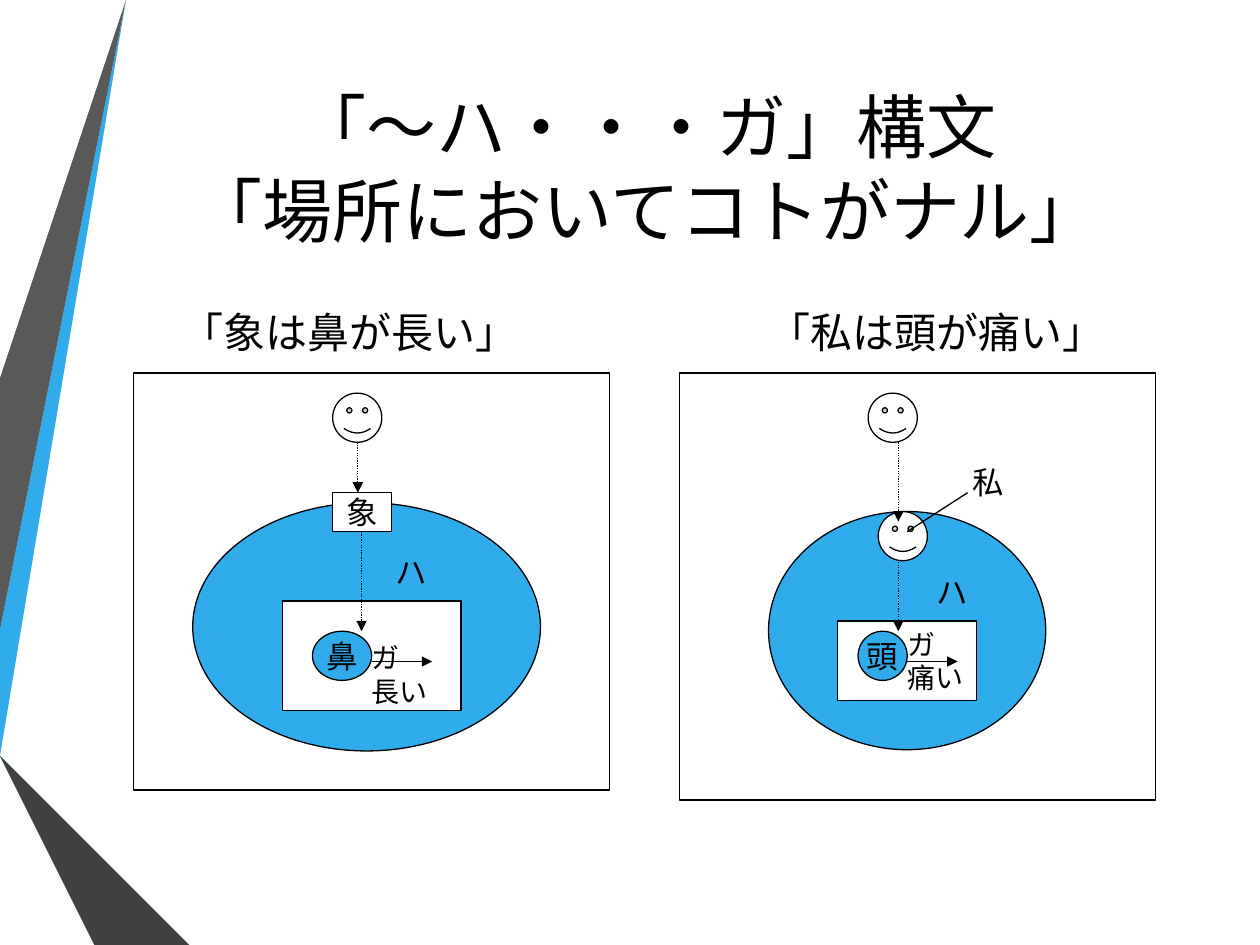
from lxml import etree
from pptx import Presentation
from pptx.dml.color import RGBColor
from pptx.enum.dml import MSO_LINE
from pptx.enum.shapes import MSO_CONNECTOR, MSO_SHAPE
from pptx.enum.text import MSO_ANCHOR, PP_ALIGN
from pptx.oxml.ns import qn
from pptx.util import Inches, Pt

BLACK = RGBColor(0x00, 0x00, 0x00)
WHITE = RGBColor(0xFF, 0xFF, 0xFF)
BLUE = RGBColor(0x30, 0xAC, 0xEC)
MID_BLUE = RGBColor(0x12, 0x87, 0xC3)
DARK_BLUE = RGBColor(0x0C, 0x5A, 0x82)
GRAY = RGBColor(0x59, 0x59, 0x59)
DARK_GRAY = RGBColor(0x40, 0x40, 0x40)
SHADOW_GRAY = RGBColor(0x26, 0x26, 0x26)

RECTANGLE = MSO_SHAPE.RECTANGLE
OVAL = MSO_SHAPE.OVAL
SMILEY = MSO_SHAPE.SMILEY_FACE
STRAIGHT = MSO_CONNECTOR.STRAIGHT
DOTTED = MSO_LINE.ROUND_DOT
MIDDLE = MSO_ANCHOR.MIDDLE
LEFT, CENTER = PP_ALIGN.LEFT, PP_ALIGN.CENTER

LINE_WIDTH = Pt(0.75)
FACE_SIZE = 0.39
LABEL_HEIGHT = 0.31

# Background ribbons: colour and corner points
RIBBONS = [
    (BLUE, [(0, 5.44), (0, 5.75), (0.22, 5.79), (1.17, 0), (0.89, 0)]),
    (GRAY, [(0.83, 0), (0.55, 0), (0, 3.36), (0, 5.06)]),
    (SHADOW_GRAY, [(0, 6.19), (0, 6.21), (0.93, 7.5), (0.99, 7.5)]),
    (DARK_BLUE, [(0, 5.79), (0, 5.8), (1.56, 7.5), (1.63, 7.5)]),
    (MID_BLUE, [(0, 5.79), (1.63, 7.5), (2.33, 7.5), (0.22, 5.79), (0, 5.75)]),
    (DARK_GRAY, [(0, 6.19), (0.99, 7.5), (1.51, 7.5), (0, 5.86)]),
]


def add_ribbon(slide, color, points):
    builder = slide.shapes.build_freeform(*points[0], scale=Inches(1))
    builder.add_line_segments(points[1:], close=True)
    ribbon = builder.convert_to_shape()
    ribbon.shadow.inherit = False
    ribbon.fill.solid()
    ribbon.fill.fore_color.rgb = color
    ribbon.line.fill.background()


def write(box, text, size, font="Arial", align=CENTER, left=0, top=0, wrap=False):
    frame = box.text_frame
    frame.word_wrap = wrap
    frame.vertical_anchor = MIDDLE
    frame.margin_left, frame.margin_top = Inches(left), Inches(top)
    frame.margin_right = frame.margin_bottom = 0
    frame.text = text
    for para in frame.paragraphs:
        para.alignment = align
        para.font.name = font
        para.font.size = Pt(size)
        para.font.color.rgb = BLACK


def add_heading(slide, text, size, left, top, width, height, align):
    box = slide.shapes.add_textbox(*map(Inches, (left, top, width, height)))
    write(box, text, size, "Calibri", align, wrap=True)


def add_figure(slide, kind, left, top, width, height, fill=WHITE, outlined=True):
    figure = slide.shapes.add_shape(kind, *map(Inches, (left, top, width, height)))
    figure.shadow.inherit = False
    figure.fill.solid()
    figure.fill.fore_color.rgb = fill
    if outlined:
        figure.line.color.rgb = BLACK
        figure.line.width = LINE_WIDTH
    else:
        figure.line.fill.background()
    return figure


def add_label(slide, text, left, top, width, fill, outlined=False):
    label = add_figure(slide, RECTANGLE, left, top, width, LABEL_HEIGHT, fill, outlined)
    write(label, text, 18)


def add_face(slide, left, top):
    face = add_figure(slide, SMILEY, left, top, FACE_SIZE, FACE_SIZE)
    face.adjustments[0] = 0.047


def add_line(slide, start, end, dotted=False, arrow=True):
    line = slide.shapes.add_connector(STRAIGHT, *map(Inches, start + end))
    line.line.color.rgb = BLACK
    line.line.width = LINE_WIDTH
    if dotted:
        line.line.dash_style = DOTTED
    if arrow:
        outline = line.line._get_or_add_ln()
        etree.SubElement(outline, qn("a:tailEnd"), type="triangle")
    etree.SubElement(line._element.spPr, qn("a:effectLst"))


def add_event(slide, frame_area, text, subject, subject_left, subject_width,
              arrow_end, text_top=0):
    """Inner box: a subject in an oval, with an arrow to its predicate."""
    text_left = subject_left + subject_width
    event = add_figure(slide, RECTANGLE, *frame_area)
    write(event, text, 16, align=LEFT, left=text_left - frame_area[0],
          top=text_top, wrap=True)
    oval = add_figure(slide, OVAL, subject_left, 5.01, subject_width, 0.39, BLUE)
    write(oval, subject, 18)
    add_line(slide, (text_left, 5.25), (arrow_end, 5.25))


def add_elephant_diagram(slide):
    add_figure(slide, RECTANGLE, 1.06, 2.96, 3.78, 3.31)
    add_figure(slide, OVAL, 1.53, 3.99, 2.76, 1.97, BLUE)
    add_label(slide, "象", 2.64, 3.91, 0.47, WHITE, outlined=True)
    add_event(slide, (2.24, 4.77, 1.42, 0.87), "ガ\n長い", "鼻", 2.48, 0.58 - 0.11,
              3.43, text_top=0.29)
    add_label(slide, "ハ", 3.03, 4.38, 0.47, BLUE)
    add_face(slide, 2.64, 3.12)
    add_line(slide, (2.84, 3.51), (2.84, 3.91), dotted=True)
    add_line(slide, (2.87, 4.22), (2.87, 5.01), dotted=True)


def add_headache_diagram(slide):
    add_figure(slide, RECTANGLE, 5.39, 2.96, 3.78, 3.39)
    add_figure(slide, OVAL, 6.1, 4.06, 2.2, 1.89, BLUE)
    add_face(slide, 6.97, 4.06)
    add_event(slide, (6.65, 4.93, 1.1, 0.63), "ガ\n痛い", "頭", 6.81, 0.39, 7.6)
    add_label(slide, "ハ", 7.36, 4.54, 0.39, BLUE)
    add_face(slide, 6.89, 3.12)
    add_line(slide, (7.13, 3.51), (7.13, 4.14), dotted=True)
    add_line(slide, (7.13, 4.46), (7.13, 5.01), dotted=True)
    add_label(slide, "私", 7.68, 3.67, 0.32, WHITE)
    add_line(slide, (7.68, 3.91), (7.2, 4.22), arrow=False)


def main():
    deck = Presentation()
    deck.slide_width, deck.slide_height = Inches(10), Inches(7.5)
    page = deck.slides.add_slide(deck.slide_layouts[6])

    # Background
    for color, points in RIBBONS:
        add_ribbon(page, color, points)

    # Title and example sentences
    add_heading(page, "「～ハ・・・ガ」構文\v「場所においてコトがナル」", 40,
                0.67, 0.25, 8.92, 2.16, CENTER)
    for sentence, left in (("「象は鼻が長い」", 1.44), ("「私は頭が痛い」", 6.1)):
        add_heading(page, sentence, 24, left, 2.38, 3, 0.5, LEFT)

    # Diagrams
    add_elephant_diagram(page)
    add_headache_diagram(page)

    deck.save("out.pptx")


if __name__ == "__main__":
    main()
